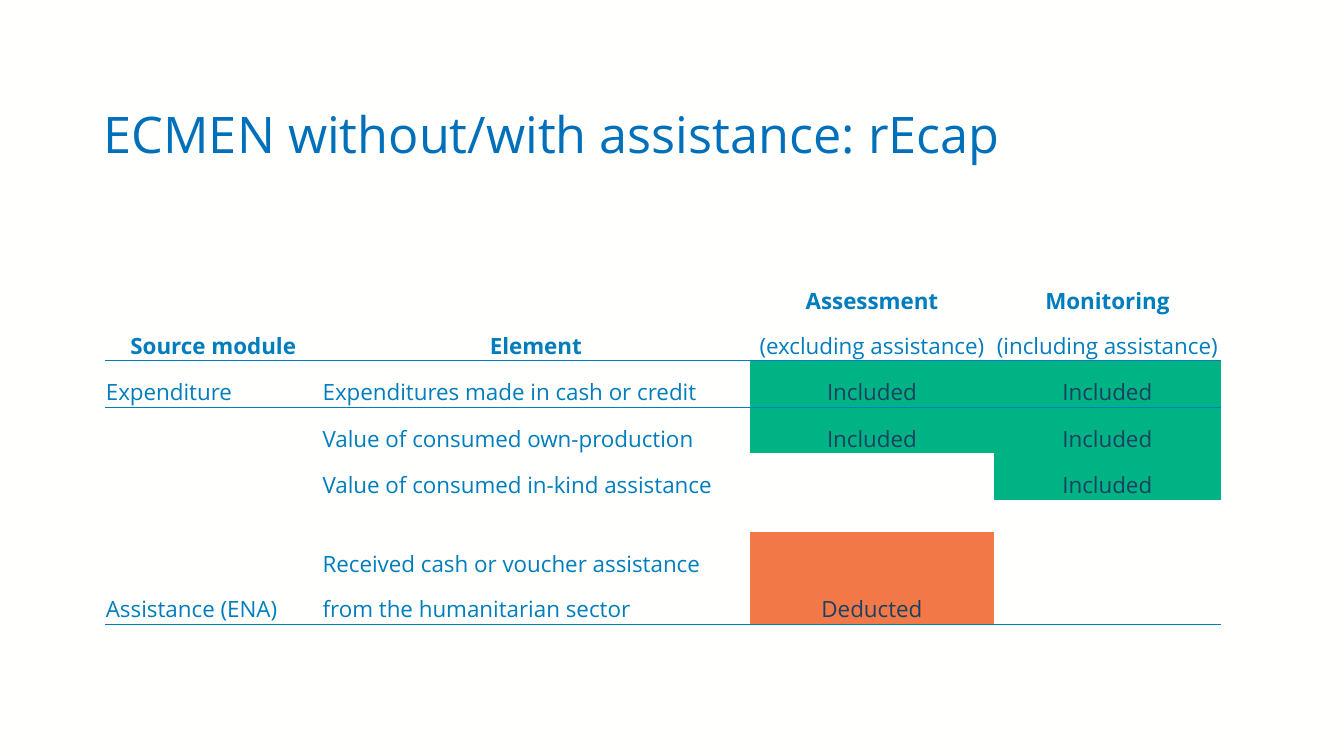
import pptx
import pptx.dml.color
import pptx.enum.text
import pptx.oxml
import pptx.oxml.ns
import pptx.util

COLORS = {
    "background": "FFFFFE",
    "title": "0070BA",
    "label": "007DBC",
    "status": "1A4161",
    "included": "00B385",
    "deducted": "F37847",
}
FONT = "Open Sans"
NO_STYLE = "{2D5ABB26-0587-4C30-8999-92F81FD0307C}"
ALIGN = pptx.enum.text.PP_ALIGN
ANCHOR = pptx.enum.text.MSO_ANCHOR

COLUMN_WIDTHS = [16.13, 31.88, 18.15, 16.88]
ROW_HEIGHTS = [12.13, 6.13, 6.13, 6.13, 4.27, 12.2]
HEADINGS = [
    ("Source module", ""),
    ("Element", ""),
    ("Assessment", " (excluding assistance)"),
    ("Monitoring", " (including assistance)"),
]
ROWS = [
    ("Expenditure", "Expenditures made in cash or credit", "Included", "Included"),
    ("", "Value of consumed own-production", "Included", "Included"),
    ("", "Value of consumed in-kind assistance", "", "Included"),
    ("", "", "", ""),
    ("Assistance (ENA)", "Received cash or voucher assistance from the humanitarian sector",
     "Deducted", ""),
]


def rgb(name):
    return pptx.dml.color.RGBColor.from_string(COLORS[name])


class SlideBuilder:
    """Places elements on a grid of 100 columns by 100 rows."""

    def __init__(self, deck):
        self.column = deck.slide_width / 100
        self.row = deck.slide_height / 100
        self.page = deck.slides.add_slide(deck.slide_layouts[6])
        fill = self.page.background.fill
        fill.solid()
        fill.fore_color.rgb = rgb("background")

    def across(self, columns):
        return round(columns * self.column)

    def down(self, rows):
        return round(rows * self.row)

    def span(self, para, text, size, color, bold=False):
        span = para.add_run()
        span.text = text
        span.font.name = FONT
        span.font.size = pptx.util.Pt(size)
        span.font.bold = bold
        span.font.color.rgb = rgb(color)

    def title(self, text, left, top, width, height):
        box = self.page.shapes.add_textbox(
            self.across(left), self.down(top), self.across(width), self.down(height))
        frame = box.text_frame
        frame.word_wrap = True
        frame.vertical_anchor = ANCHOR.MIDDLE
        para = frame.paragraphs[0]
        para.line_spacing = 0.9
        self.span(para, text, 36, "title")

    def table(self, left, top, widths, heights):
        frame = self.page.shapes.add_table(
            len(heights), len(widths), self.across(left), self.down(top),
            self.across(sum(widths)), self.down(sum(heights)))
        table = frame.table
        table.first_row = table.horz_banding = False
        table._tbl.tblPr.find(pptx.oxml.ns.qn("a:tableStyleId")).text = NO_STYLE
        for column, width in zip(table.columns, widths):
            column.width = self.across(width)
        for row, height in zip(table.rows, heights):
            row.height = self.down(height)
        return table

    def cell(self, cell, spans, color, align, anchor, fill=None, edges=()):
        """Fill a cell with (text, bold) spans; edges are "T" and "B" rules."""
        cell.margin_left = cell.margin_right = cell.margin_top = pptx.util.Inches(0.01)
        cell.margin_bottom = 0
        cell.vertical_anchor = anchor
        para = cell.text_frame.paragraphs[0]
        para.alignment = align
        para.line_spacing = 1.5
        para.space_after = pptx.util.Pt(6)
        para.font.size = pptx.util.Pt(16)
        for text, bold in spans:
            if text:
                self.span(para, text, 16, color, bold)
        for edge in edges:
            cell._tc.get_or_add_tcPr().append(pptx.oxml.parse_xml(
                f'<a:ln{edge} {pptx.oxml.ns.nsdecls("a")} w="12700"><a:solidFill>'
                f'<a:srgbClr val="{COLORS["label"]}"/></a:solidFill></a:ln{edge}>'))
        if fill:
            cell.fill.solid()
            cell.fill.fore_color.rgb = rgb(fill)
        else:
            cell.fill.background()


def main():
    deck = pptx.Presentation()
    deck.slide_width = pptx.util.Inches(13.33)
    deck.slide_height = pptx.util.Inches(7.5)
    slide = SlideBuilder(deck)
    slide.title("ECMEN without/with assistance: rEcap", 6.98, 9.73, 86.5, 16.8)

    table = slide.table(7.8, 35.6, COLUMN_WIDTHS, ROW_HEIGHTS)
    for column, (heading, detail) in enumerate(HEADINGS):
        slide.cell(table.cell(0, column), [(heading, True), (detail, False)],
                   "label", ALIGN.CENTER, ANCHOR.BOTTOM, edges="B")

    edges = {1: "T", len(ROWS): "B"}
    for row, texts in enumerate(ROWS, 1):
        for column, text in enumerate(texts):
            is_status = column >= 2
            at_bottom = column == 0 or row == len(ROWS)
            slide.cell(
                table.cell(row, column), [(text, False)],
                "status" if is_status else "label",
                ALIGN.CENTER if is_status else ALIGN.LEFT,
                ANCHOR.BOTTOM if at_bottom else ANCHOR.TOP,
                fill=text.lower() if is_status else None,
                edges=edges.get(row, ""))

    deck.save("out.pptx")


if __name__ == "__main__":
    main()
